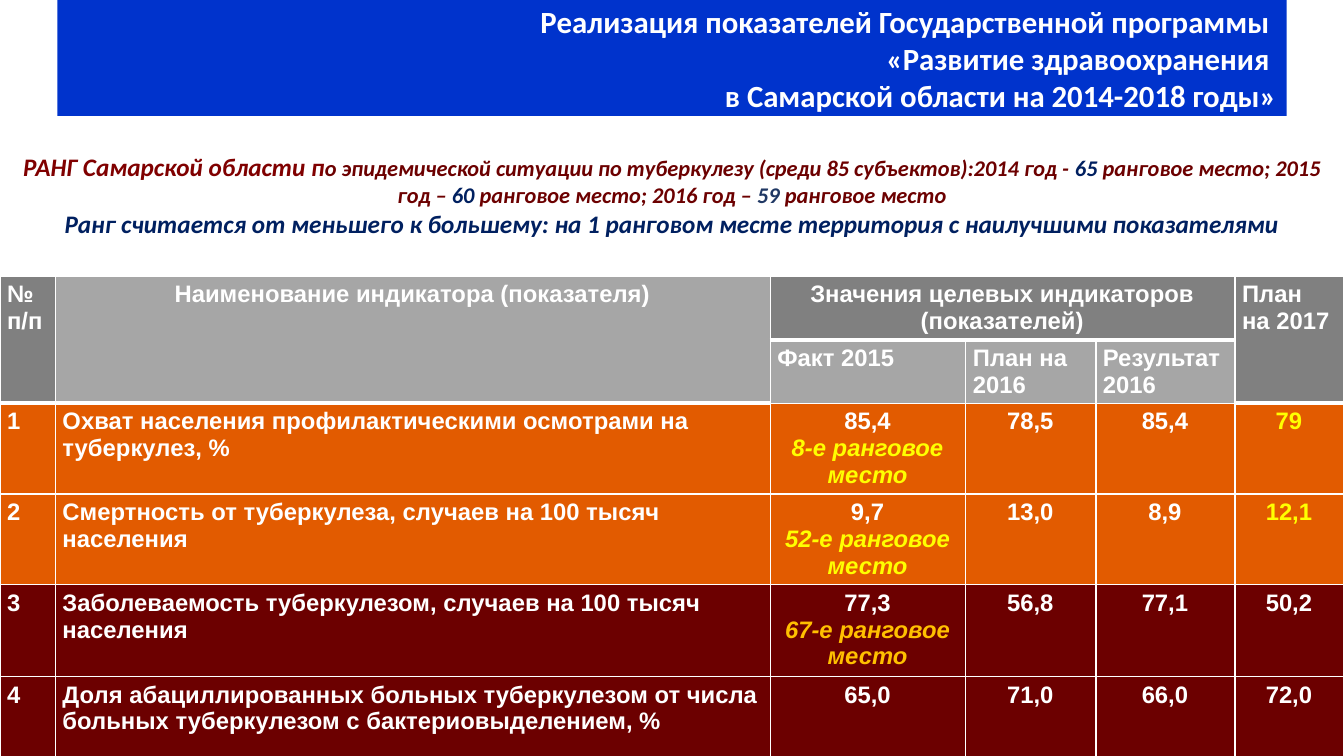
from dataclasses import dataclass

from lxml.etree import SubElement
from pptx import Presentation
from pptx.dml.color import RGBColor
from pptx.enum.text import MSO_ANCHOR, MSO_AUTO_SIZE, PP_ALIGN as Align
from pptx.oxml.ns import qn
from pptx.util import Pt

PX = 9144  # EMU in one px, 100 px to the inch


@dataclass(frozen=True)
class Theme:
    blue: str = "0033CC"
    navy: str = "002060"
    slate: str = "203864"
    wine: str = "6C0000"
    maroon: str = "800000"
    orange: str = "E25B00"
    yellow: str = "FFFF00"
    gold: str = "FFC000"
    white: str = "FFFFFF"
    dark_grey: str = "808080"
    light_grey: str = "A6A6A6"
    heading_font: str = "Calibri"
    table_font: str = "Arial"
    title_size: int = 22
    lead_size: int = 18
    rank_size: int = 16
    table_size: int = 17


theme = Theme()


def write(para, text, align=Align.LEFT, font=theme.table_font, size=theme.table_size,
          color=theme.white, italic=False):
    """Append one bold run to the paragraph and align it."""
    para.alignment = align
    span = para.add_run()
    span.text = text
    span.font.name = font
    span.font.size = Pt(size)
    span.font.bold = True
    span.font.italic = italic
    span.font.color.rgb = RGBColor.from_string(color)


def style_cell(cell, fill, top=1, bottom=1):
    """Set margins, white borders (widths in points) and fill."""
    cell.margin_left, cell.margin_right = 7 * PX, 8 * PX
    cell.margin_top = cell.margin_bottom = 5 * PX
    props = cell._tc.get_or_add_tcPr()
    for side, width in (("L", 1), ("R", 1), ("T", top), ("B", bottom)):
        line = SubElement(props, qn(f"a:ln{side}"), w=str(Pt(width)))
        solid = SubElement(line, qn("a:solidFill"))
        SubElement(solid, qn("a:srgbClr"), val=theme.white)
    cell.fill.solid()
    cell.fill.fore_color.rgb = RGBColor.from_string(fill)


deck = Presentation()
deck.slide_width, deck.slide_height = 1333 * PX, 750 * PX
page = deck.slides.add_slide(deck.slide_layouts[5])

# Title band
title = page.shapes.title
title.left, title.top, title.width, title.height = 57 * PX, 0, 1219 * PX, 115 * PX
title.fill.solid()
title.fill.fore_color.rgb = RGBColor.from_string(theme.blue)
frame = title.text_frame
frame.auto_size = MSO_AUTO_SIZE.NONE
frame.vertical_anchor = MSO_ANCHOR.MIDDLE
title_lines = ["Реализация показателей Государственной программы ",
               "«Развитие здравоохранения ",
               "в Самарской области на 2014-2018 годы»"]
for index, text in enumerate(title_lines):
    para = frame.add_paragraph() if index else frame.paragraphs[0]
    write(para, text, Align.RIGHT, theme.heading_font, theme.title_size)

# Indicator table
columns = [55, 709, 194, 129, 138, 108]
rows = [63, 63, 90, 90, 91, 80]
graphic = page.shapes.add_table(len(rows), len(columns), 0, 274 * PX,
                                sum(columns) * PX, sum(rows) * PX)
table = graphic.table
table.first_row = table.horz_banding = False
for column, width in zip(table.columns, columns):
    column.width = width * PX
for row, height in zip(table.rows, rows):
    row.height = height * PX

tall_columns = (0, 1, 5)
header_fills = [theme.dark_grey, theme.light_grey, theme.dark_grey,
                theme.dark_grey, theme.dark_grey, theme.dark_grey]
body_fills = [theme.orange, theme.orange, theme.wine, theme.wine]
for r in range(len(rows)):
    for c in range(len(columns)):
        tall = c in tall_columns
        if r > 1:
            fill = body_fills[r - 2]
        else:
            fill = header_fills[c] if r == 0 or tall else theme.light_grey
        rule_row = 1 if tall else 0
        style_cell(table.cell(r, c), fill,
                   top=3 if r == rule_row + 1 else 1,
                   bottom=3 if r == rule_row or (r == 0 and tall) else 1)
for c in tall_columns:
    table.cell(0, c).merge(table.cell(1, c))
table.cell(0, 2).merge(table.cell(0, 4))

headers = [(0, 0, "№ п/п", Align.LEFT),
           (0, 1, "Наименование индикатора (показателя)", Align.CENTER),
           (0, 2, "Значения целевых индикаторов (показателей)", Align.CENTER),
           (0, 5, "План на 2017", Align.LEFT),
           (1, 2, "Факт 2015", Align.LEFT),
           (1, 3, "План на 2016", Align.LEFT),
           (1, 4, "Результат 2016", Align.LEFT)]
for r, c, text, align in headers:
    write(table.cell(r, c).text_frame.paragraphs[0], text, align)

# Name, four values, rank note, note colour, colour of the 2017 plan
indicators = [
    ("Охват населения профилактическими осмотрами на туберкулез, %",
     ["85,4", "78,5", "85,4", "79"], "8-е ранговое место", theme.yellow, theme.yellow),
    ("Смертность от туберкулеза, случаев на 100 тысяч населения",
     ["9,7", "13,0", "8,9", "12,1"], "52-е ранговое место", theme.yellow, theme.yellow),
    ("Заболеваемость туберкулезом, случаев на 100 тысяч населения",
     ["77,3", "56,8", "77,1", "50,2"], "67-е ранговое место", theme.gold, theme.white),
    ("Доля абациллированных больных туберкулезом от числа больных туберкулезом "
     "с бактериовыделением, %",
     ["65,0", "71,0", "66,0", "72,0"], None, None, theme.white),
]
for number, (name, values, note, note_color, plan_color) in enumerate(indicators, 1):
    for c, text in enumerate([str(number), name, *values]):
        write(table.cell(number + 1, c).text_frame.paragraphs[0], text,
              Align.CENTER if c > 1 else Align.LEFT,
              color=plan_color if c == 5 else theme.white)
    if note:
        write(table.cell(number + 1, 2).text_frame.add_paragraph(), note,
              Align.CENTER, color=note_color, italic=True)

# Rank summary
summary = page.shapes.add_textbox(0, 145 * PX, 1333 * PX, 98 * PX).text_frame
summary.word_wrap = True
summary.auto_size = MSO_AUTO_SIZE.SHAPE_TO_FIT_TEXT
rank_runs = [
    ("РАНГ Самарской области п", theme.lead_size, theme.maroon),
    ("о эпидемической ситуации по туберкулезу (среди 85 субъектов):2014 год - ",
     theme.rank_size, theme.wine),
    ("65", theme.rank_size, theme.navy),
    (" ранговое место; 2015 год – ", theme.rank_size, theme.wine),
    ("60", theme.rank_size, theme.navy),
    (" ранговое место; 2016 год – ", theme.rank_size, theme.wine),
    ("59", theme.rank_size, theme.slate),
    (" ранговое место", theme.rank_size, theme.wine),
]
rule_runs = [("Ранг считается от меньшего к большему: на 1 ранговом месте территория "
              "с наилучшими показателями", theme.lead_size, theme.navy)]
for para, runs in ((summary.paragraphs[0], rank_runs), (summary.add_paragraph(), rule_runs)):
    for text, size, color in runs:
        write(para, text, Align.CENTER, theme.heading_font, size, color, italic=True)

deck.save("out.pptx")
